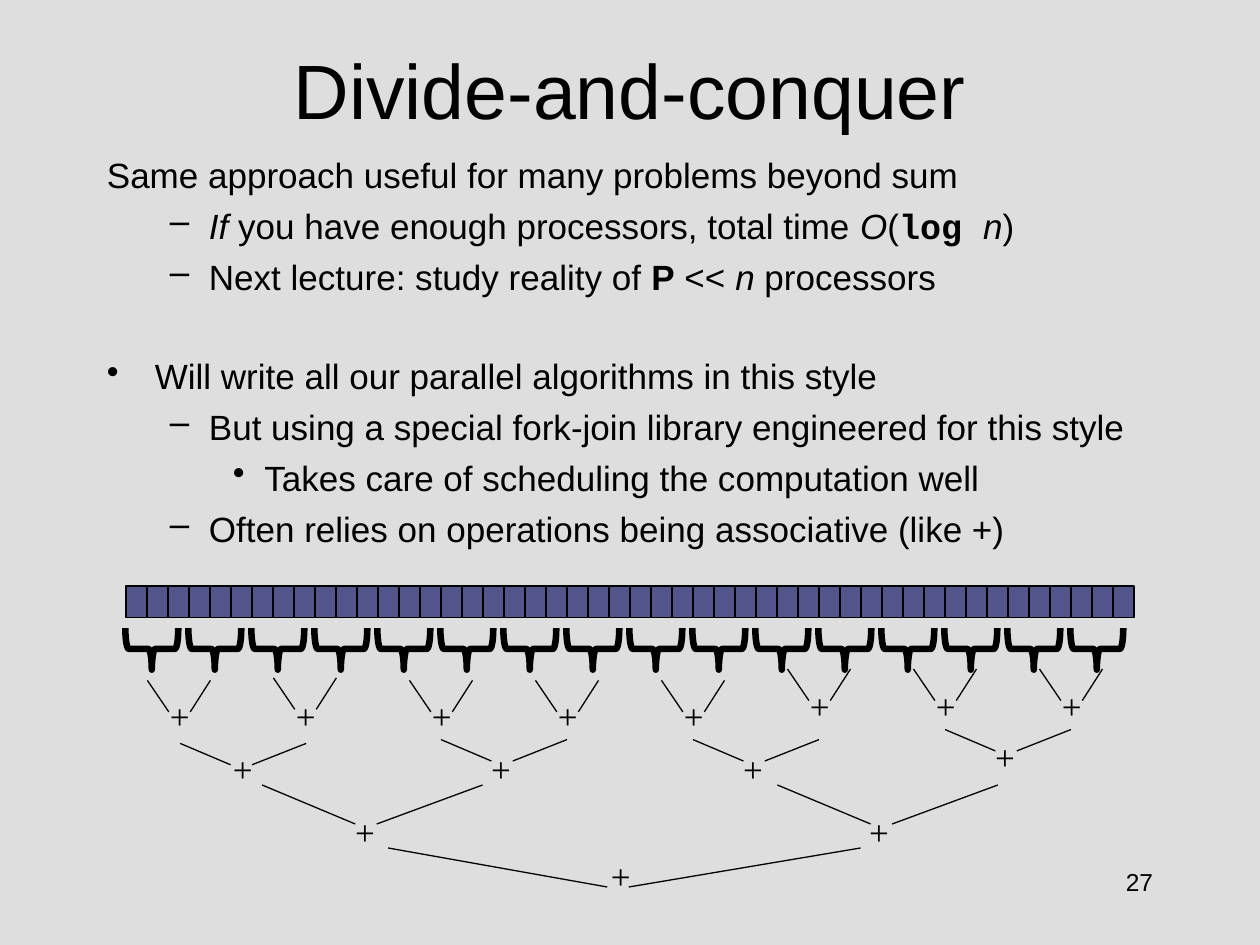
import pptx
import pptx.dml.color
import pptx.enum.shapes
import pptx.enum.text
import pptx.oxml
import pptx.util
from pptx.util import Inches

BLACK = "000000"
BAR_BLUE = "53548A"
BACKGROUND = "DEDEDE"
SHAPES = pptx.enum.shapes.MSO_SHAPE
ALIGN = pptx.enum.text.PP_ALIGN
ANCHOR = pptx.enum.text.MSO_ANCHOR
ITALIC = {"italic": True}
BOLD = {"bold": True}

# Each level: left indent, hanging indent, bullet.
PLAIN = (0, 0, None)
POINT = (0.38, -0.38, "•")
DASH = (0.81, -0.31, "–")
SUBPOINT = (1.25, -0.25, "•")

# Each paragraph: level, space before in points, runs.
BODY = [
    (PLAIN, 1.5, [("Same approach useful for many problems beyond sum", {})]),
    (DASH, 5, [("If", ITALIC), (" you have enough processors, total time ", {}),
               ("O", ITALIC), ("(", {}),
               ("log ", {"name": "Courier New", "bold": True}),
               ("n", ITALIC), (")", {})]),
    (DASH, 5, [("Next lecture: study reality of ", {}), ("P", BOLD),
               (" << ", {}), ("n", ITALIC), (" processors", {})]),
    (POINT, 33, [("Will write all our parallel algorithms in this style", {})]),
    (DASH, 5, [("But using a special fork-join library engineered for this style", {})]),
    (SUBPOINT, 5, [("Takes care of scheduling the computation well", {})]),
    (DASH, 5, [("Often relies on operations being associative (like +)", {})]),
]

# Each tree level: branch span, left branch run, branch drop, then its nodes
# as branch left, branch top, plus left, plus top.
TREE = [
    (0.5, 0.17, 0.25, [(1.17, 5.4, 1.25, 5.46), (2.17, 5.38, 2.25, 5.46),
                       (3.25, 5.4, 3.33, 5.46), (4.25, 5.4, 4.33, 5.46),
                       (5.25, 5.4, 5.33, 5.46), (6.25, 5.31, 6.33, 5.38),
                       (7.25, 5.31, 7.33, 5.38), (8.25, 5.31, 8.33, 5.38)]),
    (1, 0.4, 0.17, [(1.43, 5.9, 1.75, 5.88), (3.5, 5.87, 3.8, 5.88),
                    (5.5, 5.87, 5.8, 5.88), (7.5, 5.79, 7.8, 5.79)]),
    (1.75, 0.74, 0.31, [(2.08, 6.23, 2.72, 6.38), (6.17, 6.23, 6.8, 6.38)]),
    (3.75, 1.74, 0.31, [(3.08, 6.73, 4.75, 6.73)]),
]
APEX_GAP = 0.17


def color(hex_value):
    """Turn a hex string into a colour."""
    return pptx.dml.color.RGBColor.from_string(hex_value)


def set_values(target, values):
    """Set every attribute named in the dict."""
    for name, value in values.items():
        setattr(target, name, value)


def set_line(shape, points):
    """Give a shape a black line."""
    shape.line.color.rgb = color(BLACK)
    shape.line.width = pptx.util.Pt(points)


def add_run(paragraph, text, size, values):
    """Add a black run, in Arial unless the values differ."""
    run = paragraph.add_run()
    run.text = text
    set_values(run.font, {"name": "Arial", "size": pptx.util.Pt(size), **values})
    run.font.color.rgb = color(BLACK)


def add_text_frame(slide, box, **values):
    """Add a text box and return its text frame."""
    frame = slide.shapes.add_textbox(*map(Inches, box)).text_frame
    set_values(frame, {"word_wrap": True, **values})
    return frame


def add_label(slide, text, box, size, alignment=ALIGN.LEFT, font="Arial", **values):
    """Add a text box with one run."""
    paragraph = add_text_frame(slide, box, **values).paragraphs[0]
    paragraph.alignment = alignment
    add_run(paragraph, text, size, {"name": font})


def set_level(paragraph, indent, hanging, bullet):
    """Set the indents and the bullet of a paragraph."""
    properties = paragraph._p.get_or_add_pPr()
    properties.set("marL", str(Inches(indent)))
    properties.set("indent", str(Inches(hanging)))
    if bullet:
        element = pptx.oxml.xmlchemy.OxmlElement("a:buChar")
        element.set("char", bullet)
        properties.append(element)


def add_body(slide):
    """Add the bulleted text."""
    frame = add_text_frame(slide, (0.75, 1.17, 8.92, 3.33))
    for index, (level, space, runs) in enumerate(BODY):
        paragraph = frame.add_paragraph() if index else frame.paragraphs[0]
        paragraph.space_before = pptx.util.Pt(space)
        set_level(paragraph, *level)
        for text, values in runs:
            add_run(paragraph, text, 20, values)


def add_array(slide, count=48):
    """Add the row of array cells."""
    for index in range(count):
        cell = slide.shapes.add_shape(
            SHAPES.RECTANGLE, Inches(1 + index / 6), Inches(4.65),
            Inches(1 / 6), Inches(0.25))
        cell.shadow.inherit = False
        cell.fill.solid()
        cell.fill.fore_color.rgb = color(BAR_BLUE)
        set_line(cell, 0.75)


def add_braces(slide, count=16):
    """Add the braces that group the array cells."""
    for index in range(count):
        brace = slide.shapes.add_shape(
            SHAPES.LEFT_BRACE, Inches(1.04 + index / 2), Inches(4.94),
            Inches(0.33), Inches(0.42))
        brace.shadow.inherit = False
        brace.rotation = 270
        brace.fill.background()
        set_line(brace, 3.75)


def add_branch(slide, *ends):
    """Add a straight line of the tree."""
    branch = slide.shapes.add_connector(
        pptx.enum.shapes.MSO_CONNECTOR.STRAIGHT, *map(Inches, ends))
    set_line(branch, 0.75)
    branch._element.spPr.append(pptx.oxml.xmlchemy.OxmlElement("a:effectLst"))


def add_tree(slide):
    """Add the tree of additions."""
    for span, run, drop, nodes in TREE:
        for left, top, plus_left, plus_top in nodes:
            apex, bottom = left + run, top + drop
            add_branch(slide, left, top, apex, bottom)
            add_branch(slide, left + span, top, apex + APEX_GAP, bottom)
            add_label(slide, "+", (plus_left, plus_top, 0.36, 0.44), 20,
                      font="Times New Roman", word_wrap=False)


def main():
    """Build the slide and save it."""
    presentation = pptx.Presentation()
    set_values(presentation, {"slide_width": Inches(10), "slide_height": Inches(7.5)})
    slide = presentation.slides.add_slide(presentation.slide_layouts[6])
    slide.background.fill.solid()
    slide.background.fill.fore_color.rgb = color(BACKGROUND)
    add_label(slide, "Divide-and-conquer", (0.75, 0.08, 8.5, 1.25), 44,
              ALIGN.CENTER, vertical_anchor=ANCHOR.MIDDLE)
    add_body(slide)
    add_label(slide, "27", (7.17, 6.83, 2.08, 0.5), 14, ALIGN.RIGHT)
    add_array(slide)
    add_braces(slide)
    add_tree(slide)
    presentation.save("out.pptx")


if __name__ == "__main__":
    main()
